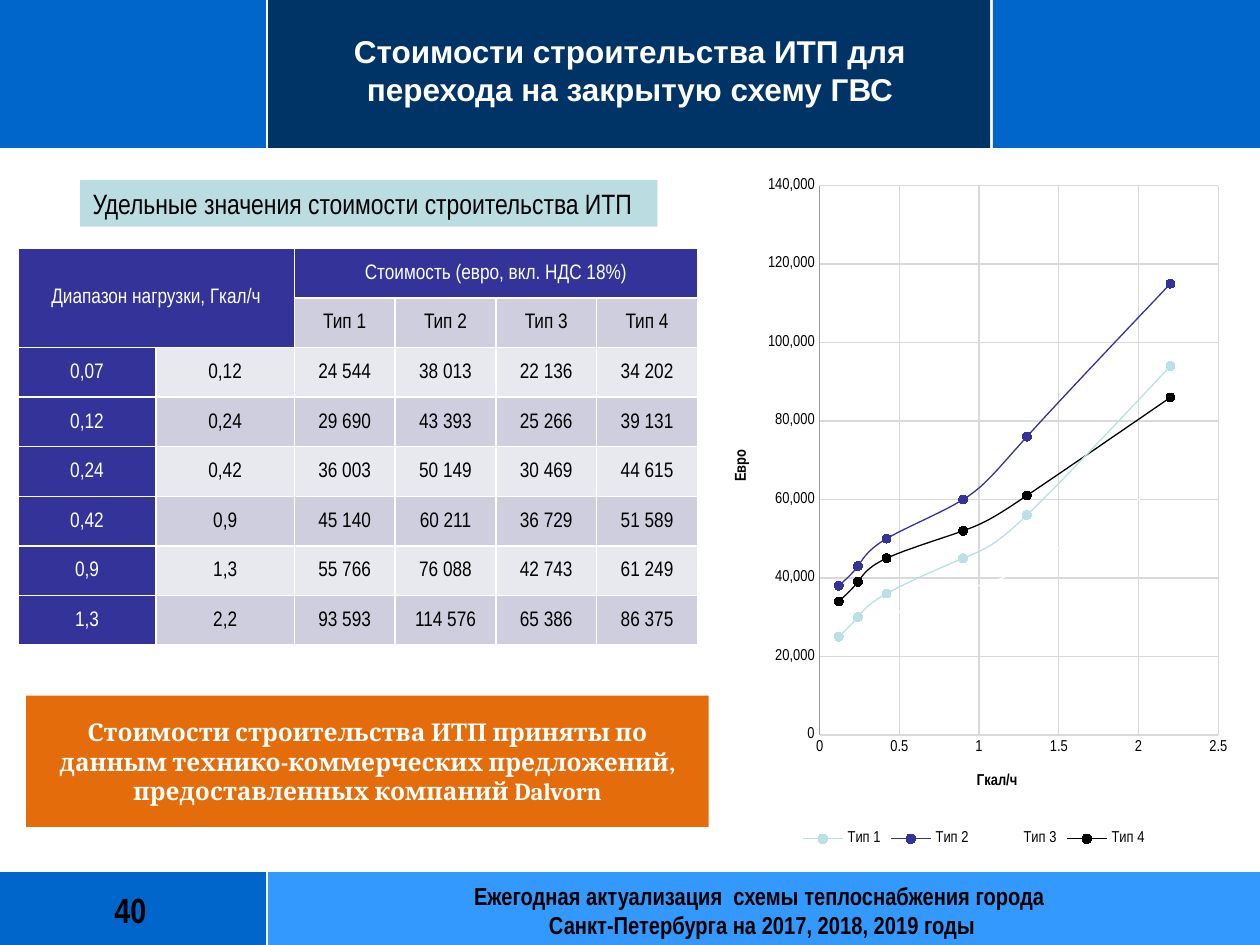
import pptx
import pptx.chart.data
import pptx.dml.color
import pptx.enum.chart
import pptx.enum.shapes
import pptx.enum.text
import pptx.oxml
import pptx.oxml.ns
import pptx.util

Pt = pptx.util.Pt
RGB = pptx.dml.color.RGBColor.from_string
ALIGN = pptx.enum.text.PP_ALIGN
MIDDLE = pptx.enum.text.MSO_ANCHOR.MIDDLE
NS = pptx.oxml.ns.nsdecls
COLORS = {
    "white": "FFFFFF", "black": "000000", "blue": "0066CC", "navy": "003366",
    "sky": "3399FF", "indigo": "333399", "dark band": "CECEDE", "light band": "E8E8EF",
    "mint": "BADDE1", "orange": "E46C0A", "grid": "D9D9D9", "axis": "999999",
    "type 1": "BBE0E3",
}
NARROW = "Arial Narrow"

presentation = pptx.Presentation()
presentation.slide_width, presentation.slide_height = Pt(720), Pt(540)
slide = presentation.slides.add_slide(presentation.slide_layouts[6])


def add_block(left, top, width, height, color):
    block = slide.shapes.add_shape(pptx.enum.shapes.MSO_SHAPE.RECTANGLE,
                                   Pt(left), Pt(top), Pt(width), Pt(height))
    block.shadow.inherit = False
    block.fill.solid()
    block.fill.fore_color.rgb = RGB(COLORS[color])
    block.line.fill.background()
    return block


def write(frame, text, size, color, font=NARROW, bold=False, align=ALIGN.CENTER):
    frame.text = text
    for paragraph in frame.paragraphs:
        paragraph.alignment = align
        for run in paragraph.runs:
            run.font.size, run.font.name, run.font.bold = Pt(size), font, bold
            run.font.color.rgb = RGB(COLORS[color])


# Header and footer bands
for band in [(567.4, 0, 152.6, 85, "blue"), (0, 497.5, 152.6, 42.5, "blue"),
             (152.6, 497.5, 567.4, 42.5, "sky"), (0, 0, 152.6, 85, "blue"),
             (152.6, 0, 413.3, 85, "navy")]:
    add_block(*band)

# White dividers
for x1, y1, x2, y2 in [(152.6, 497.5, 152.6, 540), (152.6, 0, 152.6, 85),
                       (0, 497.5, 720, 497.5), (0, 85, 720, 85)]:
    divider = slide.shapes.add_connector(pptx.enum.shapes.MSO_CONNECTOR.STRAIGHT,
                                         Pt(x1), Pt(y1), Pt(x2), Pt(y2))
    divider.line.color.rgb = RGB(COLORS["white"])
    divider.line.width = Pt(1.25)
    divider._element.spPr.append(pptx.oxml.parse_xml(f"<a:effectLst {NS('a')}/>"))

# Title, page number and footer text
for left, top, width, height, text, size, color, font in [
    (160.5, 0.3, 399, 79.2, "Стоимости строительства ИТП для перехода на закрытую схему ГВС",
     18, "white", "Arial"),
    (15.8, 501, 117.4, 37.4, "40", 20, "black", NARROW),
    (169.2, 501.3, 532.8, 37.4, "Ежегодная актуализация  схемы теплоснабжения города \n"
     "Санкт-Петербурга на 2017, 2018, 2019 годы", 14, "black", NARROW),
]:
    frame = slide.shapes.add_textbox(Pt(left), Pt(top), Pt(width), Pt(height)).text_frame
    frame.margin_left = frame.margin_right = frame.margin_top = frame.margin_bottom = 0
    frame.word_wrap = True
    frame.vertical_anchor = MIDDLE
    write(frame, text, size, color, font, bold=True)

# Cost table
types = ["Тип 1", "Тип 2", "Тип 3", "Тип 4"]
costs = [
    ("0,07", "0,12", 24544, 38013, 22136, 34202),
    ("0,12", "0,24", 29690, 43393, 25266, 39131),
    ("0,24", "0,42", 36003, 50149, 30469, 44615),
    ("0,42", "0,9", 45140, 60211, 36729, 51589),
    ("0,9", "1,3", 55766, 76088, 42743, 61249),
    ("1,3", "2,2", 93593, 114576, 65386, 86375),
]
rows = [["Диапазон нагрузки, Гкал/ч", "", "Стоимость (евро, вкл. НДС 18%)", "", "", ""],
        ["", ""] + types]
rows += [[low, high] + [f"{cost:,}".replace(",", " ") for cost in values]
         for low, high, *values in costs]
table = slide.shapes.add_table(len(rows), 6, Pt(10.2), Pt(141.9), Pt(388.4), Pt(226.8)).table
for index, column in enumerate(table.columns):
    column.width = Pt(79 if index < 2 else 57.6)
for r, row in enumerate(rows):
    table.rows[r].height = Pt(28.35)
    for c, text in enumerate(row):
        cell = table.cell(r, c)
        heading = r == 0 or c == 0 or (r == 1 and c == 1)
        write(cell.text_frame, text, 12, "white" if heading else "black")
        cell.vertical_anchor = MIDDLE
        cell.margin_left = cell.margin_right = cell.margin_top = Pt(0.7)
        cell.margin_bottom = 0
        properties = cell._tc.get_or_add_tcPr()
        for side in ("lnL", "lnR", "lnT", "lnB"):
            properties.append(pptx.oxml.parse_xml(
                f'<a:{side} {NS("a")} w="{Pt(1)}"><a:solidFill>'
                f'<a:srgbClr val="{COLORS["white"]}"/></a:solidFill></a:{side}>'))
        cell.fill.solid()
        band = "dark band" if r % 2 else "light band"
        cell.fill.fore_color.rgb = RGB(COLORS["indigo" if heading else band])
table.cell(0, 0).merge(table.cell(1, 1))
table.cell(0, 2).merge(table.cell(0, 5))

# Table caption and source note
caption = add_block(45.8, 103, 329.8, 26.6, "mint").text_frame
write(caption, "Удельные значения стоимости строительства ИТП", 16, "black", align=ALIGN.LEFT)
caption.word_wrap = False
caption.vertical_anchor = pptx.enum.text.MSO_ANCHOR.TOP
note = add_block(15, 397.6, 390, 75, "orange").text_frame
write(note, "Стоимости строительства ИТП приняты по данным технико-коммерческих "
      "предложений, предоставленных компаний Dalvorn", 14, "white", "Cambria", bold=True)
note.word_wrap = True
note.vertical_anchor = MIDDLE

# Cost chart: upper load limit against cost, rounded to thousands
chart_data = pptx.chart.data.XyChartData(number_format="General")
for index, name in enumerate(types):
    points = chart_data.add_series(name)
    for row in costs:
        points.add_data_point(float(row[1].replace(",", ".")), round(row[2 + index], -3))
chart = slide.shapes.add_chart(pptx.enum.chart.XL_CHART_TYPE.XY_SCATTER_SMOOTH, Pt(404.6),
                               Pt(94.3), Pt(303.8), Pt(392.4), chart_data).chart
chart.has_title = False
chart.font.size, chart.font.name = Pt(9), NARROW
chart.font.color.rgb = RGB(COLORS["black"])
chart.has_legend = True
chart.legend.position = pptx.enum.chart.XL_LEGEND_POSITION.BOTTOM
chart.legend.include_in_layout = False
chart.plots[0].vary_by_categories = False

for series, color in zip(chart.plots[0].series, ["type 1", "indigo", "white", "black"]):
    series._element.get_or_add_smooth().val = True
    series.format.line.color.rgb = RGB(COLORS[color])
    series.format.line.width = Pt(0.75)
    series.marker.style = pptx.enum.chart.XL_MARKER_STYLE.CIRCLE
    series.marker.size = 5
    series.marker.format.fill.solid()
    series.marker.format.fill.fore_color.rgb = RGB(COLORS[color])
    series.marker.format.line.color.rgb = RGB(COLORS[color])

layout = ('<c:layout {ns}><c:manualLayout>{target}<c:xMode val="edge"/><c:yMode val="edge"/>'
          '<c:x val="{x}"/><c:y val="{y}"/>{size}</c:manualLayout></c:layout>')
for axis, title, limit, step, number_format, line, x, y in [
    (chart.category_axis, "Гкал/ч", 2.5, 0.5, "General", "grid", 0.5, 0.88),
    (chart.value_axis, "Евро", 140000, 20000, "#,##0", "axis", 0.04, 0.41),
]:
    axis.minimum_scale, axis.maximum_scale, axis.major_unit = 0, limit, step
    axis.major_tick_mark = axis.minor_tick_mark = pptx.enum.chart.XL_TICK_MARK.NONE
    axis.tick_labels.number_format = number_format
    axis.tick_labels.number_format_is_linked = False
    axis.has_major_gridlines = True
    for stroke, color in [(axis.format.line, line), (axis.major_gridlines.format.line, "grid")]:
        stroke.color.rgb = RGB(COLORS[color])
        stroke.width = Pt(0.75)
    write(axis.axis_title.text_frame, title, 9, "black", bold=True)
    title_element = axis.axis_title._element
    for automatic in title_element.findall(pptx.oxml.ns.qn("c:layout")):
        title_element.remove(automatic)
    title_element.find(pptx.oxml.ns.qn("c:tx")).addnext(pptx.oxml.parse_xml(
        layout.format(ns=NS("c"), target="", x=x, y=y, size="")))

plot_area = chart._chartSpace.chart.plotArea
for automatic in plot_area.findall(pptx.oxml.ns.qn("c:layout")):
    plot_area.remove(automatic)
plot_area.insert(0, pptx.oxml.parse_xml(layout.format(
    ns=NS("c"), target='<c:layoutTarget val="inner"/>', x=0.21, y=0.03,
    size='<c:w val="0.75"/><c:h val="0.8"/>')))

presentation.save("out.pptx")
